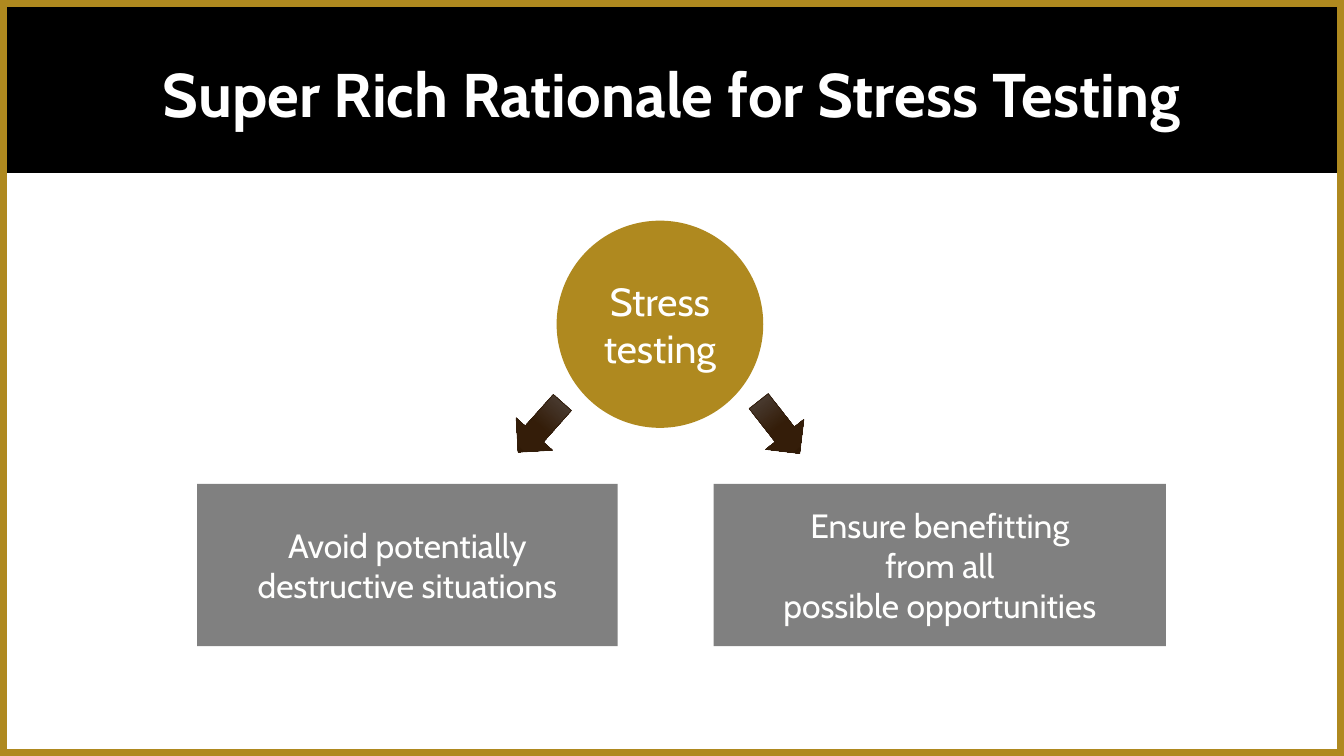
from copy import deepcopy
from dataclasses import dataclass

from pptx import Presentation
from pptx.dml.color import RGBColor
from pptx.enum.shapes import MSO_SHAPE
from pptx.enum.text import MSO_ANCHOR, PP_ALIGN
from pptx.oxml.ns import qn
from pptx.shapes.autoshape import Shape
from pptx.slide import Slide
from pptx.text.text import TextFrame
from pptx.util import Pt

FONT = "Cabin"
GOLD = "AF891F"
BLACK = "000000"
GRAY = "808080"
WHITE = "FFFFFF"
LABEL_WHITE = "FFFFFE"
ARROW_LINE = "321D0B"
ARROW_STOPS = [(0, "574F4B"), (0.5, "341D09"), (1, "301A06")]


@dataclass(frozen=True)
class Box:
    left: float
    top: float
    width: float
    height: float


@dataclass(frozen=True)
class Node:
    kind: MSO_SHAPE
    box: Box
    fill: str
    text: str
    size: float
    wrap: bool


@dataclass(frozen=True)
class Arrow:
    left: float
    rotation: float


NODES = [
    Node(MSO_SHAPE.OVAL, Box(397.6, 157.6, 147.6, 148), GOLD, "Stress testing", 28, True),
    Node(MSO_SHAPE.RECTANGLE, Box(140.8, 345.6, 300.4, 116), GRAY,
         "Avoid potentially\ndestructive situations", 24, False),
    Node(MSO_SHAPE.RECTANGLE, Box(509.8, 345.6, 323, 116), GRAY,
         "Ensure benefitting\nfrom all\npossible opportunities", 24, False),
]
ARROWS = [Arrow(368.6, 41.7), Arrow(539.3, 321.9)]


def color(value: str) -> RGBColor:
    return RGBColor.from_string(value)


def add_plain_shape(slide: Slide, kind: MSO_SHAPE, box: Box) -> Shape:
    shape = slide.shapes.add_shape(
        kind, Pt(box.left), Pt(box.top), Pt(box.width), Pt(box.height))
    shape.shadow.inherit = False
    shape.line.fill.background()
    return shape


def fill_solid(shape: Shape, value: str) -> None:
    shape.fill.solid()
    shape.fill.fore_color.rgb = color(value)


def set_outline(shape: Shape, value: str, width: float) -> None:
    shape.line.color.rgb = color(value)
    shape.line.width = Pt(width)


def write_centered(frame: TextFrame, text: str, size: float, value: str, bold: bool = False) -> None:
    frame.text = text
    frame.vertical_anchor = MSO_ANCHOR.MIDDLE
    for paragraph in frame.paragraphs:
        paragraph.alignment = PP_ALIGN.CENTER
        for run in paragraph.runs:
            run.font.name = FONT
            run.font.size = Pt(size)
            run.font.bold = bold
            run.font.color.rgb = color(value)


def draw_header(slide: Slide) -> None:
    band = add_plain_shape(slide, MSO_SHAPE.RECTANGLE, Box(4, 4, 956, 119.6))
    fill_solid(band, BLACK)
    border = add_plain_shape(slide, MSO_SHAPE.RECTANGLE, Box(0, 0, 960, 540))
    border.fill.background()
    set_outline(border, GOLD, 10)

    heading = slide.shapes.title
    heading.left, heading.top, heading.width, heading.height = Pt(19.2), Pt(28.8), Pt(921.6), Pt(82)
    write_centered(heading.text_frame, "Super Rich Rationale for Stress Testing", 44, WHITE, True)
    heading.text_frame.paragraphs[0].line_spacing = 0.9
    border.element.addnext(heading.element)


def draw_node(slide: Slide, node: Node) -> None:
    shape = add_plain_shape(slide, node.kind, node.box)
    fill_solid(shape, node.fill)
    shape.text_frame.word_wrap = node.wrap
    write_centered(shape.text_frame, node.text, node.size, LABEL_WHITE)


def draw_arrow(slide: Slide, arrow: Arrow) -> None:
    shape = add_plain_shape(slide, MSO_SHAPE.DOWN_ARROW, Box(arrow.left, 281.5, 34.6, 47.5))
    shape.rotation = arrow.rotation
    shape.fill.gradient()
    shape.fill.gradient_angle = 270
    first_stop = next(shape.element.iter(qn("a:gs")))
    first_stop.addnext(deepcopy(first_stop))
    for stop, (position, value) in zip(shape.fill.gradient_stops, ARROW_STOPS):
        stop.position = position
        stop.color.rgb = color(value)
    set_outline(shape, ARROW_LINE, 0.5)


def main() -> None:
    presentation = Presentation()
    presentation.slide_width, presentation.slide_height = Pt(960), Pt(540)
    slide = presentation.slides.add_slide(presentation.slide_layouts[5])
    draw_header(slide)
    for node in NODES:
        draw_node(slide, node)
    for arrow in ARROWS:
        draw_arrow(slide, arrow)
    presentation.save("out.pptx")


if __name__ == "__main__":
    main()
